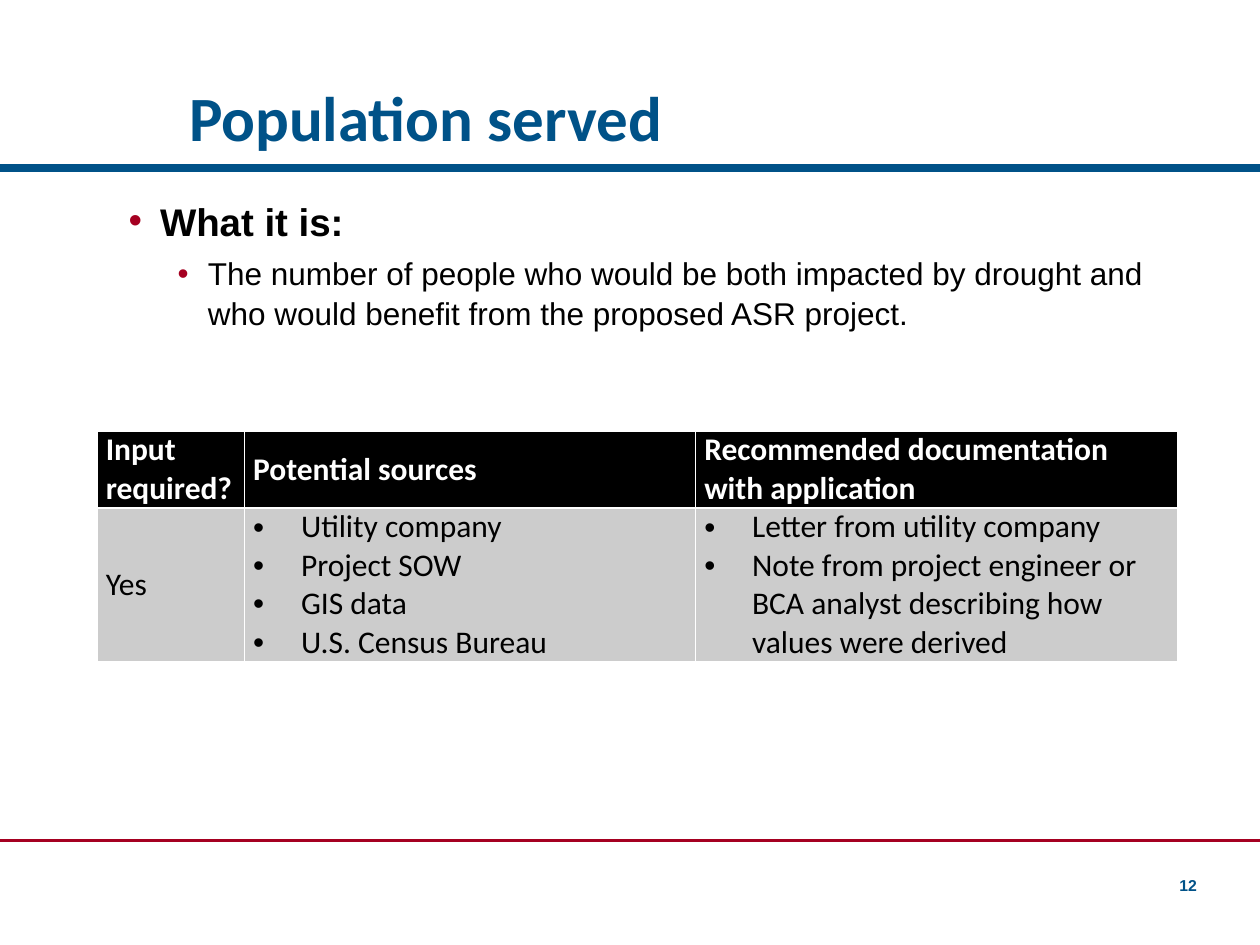
import pptx
import pptx.dml.color
import pptx.enum.shapes
import pptx.enum.text
import pptx.oxml.ns
import pptx.util
from lxml import etree

Inches = pptx.util.Inches
Pt = pptx.util.Pt
Align = pptx.enum.text.PP_ALIGN
Anchor = pptx.enum.text.MSO_ANCHOR

BLUE = "005288"
RED = "A50021"
BLACK = "000000"
WHITE = "FFFFFF"
GRAY = "CCCCCC"


def color(value):
    return pptx.dml.color.RGBColor.from_string(value)


def add_element(parent, tag, **attributes):
    return etree.SubElement(parent, pptx.oxml.ns.qn(tag), attributes)


def place(shape, box):
    shape.left, shape.top, shape.width, shape.height = map(Inches, box)


def set_frame(text_frame, anchor, margins):
    text_frame.word_wrap = True
    text_frame.auto_size = pptx.enum.text.MSO_AUTO_SIZE.NONE
    text_frame.vertical_anchor = anchor
    (text_frame.margin_left, text_frame.margin_top,
     text_frame.margin_right, text_frame.margin_bottom) = map(Inches, margins)


def format_runs(paragraph, font, size, value, bold=False):
    for run in paragraph.runs:
        run.font.name = font
        run.font.size = Pt(size)
        run.font.bold = bold
        run.font.color.rgb = color(value)


def set_bullet(paragraph, left, hanging, value):
    properties = paragraph._p.get_or_add_pPr()
    properties.set("marL", str(Inches(left)))
    properties.set("indent", str(-Inches(hanging)))
    bullet_color = add_element(properties, "a:buClr")
    add_element(bullet_color, "a:srgbClr", val=value)
    add_element(properties, "a:buFont", typeface="Arial")
    add_element(properties, "a:buChar", char="•")


def add_rule(slide, top, value, width):
    rule = slide.shapes.add_connector(
        pptx.enum.shapes.MSO_CONNECTOR.STRAIGHT,
        0, Inches(top), Inches(10), Inches(top))
    rule.line.color.rgb = color(value)
    rule.line.width = Pt(width)
    add_element(rule._element.spPr, "a:effectLst")


def fill_title(slide, box, text):
    title = slide.shapes.title
    place(title, box)
    set_frame(title.text_frame, Anchor.BOTTOM, (0, 0.05, 0.1, 0.05))
    title.text_frame.text = text
    paragraph = title.text_frame.paragraphs[0]
    paragraph.alignment = Align.LEFT
    paragraph.line_spacing = 0.9
    format_runs(paragraph, "Calibri", 36, BLUE, True)


def fill_body(slide, box, heading, detail):
    body = slide.placeholders[1]
    place(body, box)
    text_frame = body.text_frame
    set_frame(text_frame, Anchor.TOP, (0.1, 0.05, 0.1, 0.05))
    text_frame.text = f"{heading}\n{detail}"
    styles = [(0.25, 0.25, 22, True), (0.63, 0.24, 18, False)]
    for level, (left, hanging, size, bold) in enumerate(styles):
        paragraph = text_frame.paragraphs[level]
        paragraph.level = level
        set_bullet(paragraph, left, hanging, RED)
        paragraph.space_before = Pt(5)
        paragraph.line_spacing = 1.05
        format_runs(paragraph, "Arial", size, BLACK, bold)


def set_borders(cell):
    properties = cell._tc.get_or_add_tcPr()
    for side in ("a:lnL", "a:lnR", "a:lnT", "a:lnB"):
        border = add_element(properties, side, w=str(Pt(1)))
        fill = add_element(border, "a:solidFill")
        add_element(fill, "a:srgbClr", val=WHITE)


def fill_cell(cell, content, header):
    bulleted = isinstance(content, list)
    cell.text_frame.text = "\n".join(content) if bulleted else content
    cell.vertical_anchor = Anchor.MIDDLE
    cell.margin_left = cell.margin_right = Inches(0.07)
    cell.margin_top = cell.margin_bottom = 0
    set_borders(cell)
    cell.fill.solid()
    cell.fill.fore_color.rgb = color(BLACK if header else GRAY)
    for paragraph in cell.text_frame.paragraphs:
        if bulleted:
            set_bullet(paragraph, 0.38, 0.38, BLACK)
        format_runs(paragraph, "Calibri", 18, WHITE if header else BLACK, header)


def add_sources_table(slide, box, widths, heights, rows):
    table = slide.shapes.add_table(
        len(rows), len(widths), *map(Inches, box)).table
    for column, width in zip(table.columns, widths):
        column.width = Inches(width)
    for row, height, contents in zip(table.rows, heights, rows):
        row.height = Inches(height)
        for cell, content in zip(row.cells, contents):
            fill_cell(cell, content, contents is rows[0])


def add_slide_number(slide, box, number):
    text_box = slide.shapes.add_textbox(*map(Inches, box))
    set_frame(text_box.text_frame, Anchor.BOTTOM, (0, 0.05, 0, 0.05))
    text_box.text_frame.text = number
    paragraph = text_box.text_frame.paragraphs[0]
    paragraph.alignment = Align.RIGHT
    format_runs(paragraph, "Arial", 9, BLUE, True)


def build_population_slide(presentation):
    slide = presentation.slides.add_slide(presentation.slide_layouts[1])
    add_rule(slide, 1.33, BLUE, 4.5)
    add_rule(slide, 6.67, RED, 1.5)
    fill_title(slide, (1.5, 0, 8, 1.28), "Population served")
    fill_body(
        slide, (0.92, 1.5, 8.58, 4.75), "What it is:",
        "The number of people who would be both impacted by drought and "
        "who would benefit from the proposed ASR project.")
    rows = [
        ["Input required?", "Potential sources",
         "Recommended documentation with application"],
        ["Yes",
         ["Utility company", "Project SOW", "GIS data", "U.S. Census Bureau"],
         ["Letter from utility company",
          "Note from project engineer or BCA analyst describing how "
          "values were derived"]],
    ]
    add_sources_table(slide, (0.77, 3.42, 8.58, 1.83),
                      (1.17, 3.58, 3.83), (0.61, 1.22), rows)
    add_slide_number(slide, (9.17, 6.9, 0.33, 0.25), "12")


def main():
    presentation = pptx.Presentation()
    presentation.slide_width = Inches(10)
    presentation.slide_height = Inches(7.5)
    build_population_slide(presentation)
    presentation.save("out.pptx")


if __name__ == "__main__":
    main()
